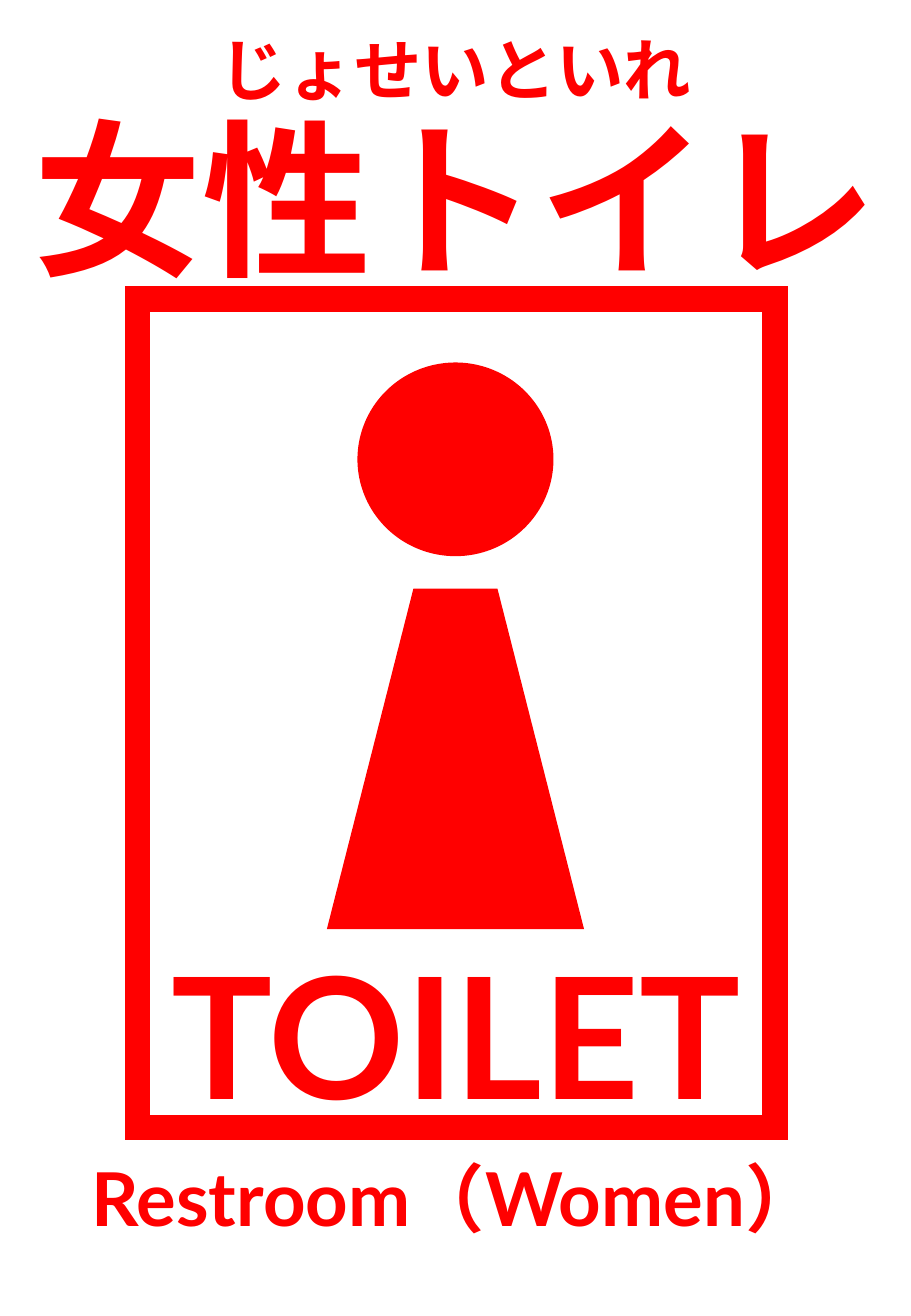
from dataclasses import dataclass
from typing import Optional

from lxml import etree
from pptx import Presentation
from pptx.dml.color import RGBColor
from pptx.enum.shapes import MSO_SHAPE
from pptx.enum.text import MSO_ANCHOR, MSO_AUTO_SIZE, PP_ALIGN
from pptx.oxml.ns import qn
from pptx.slide import Slide
from pptx.util import Inches, Pt

ELLIPSE = MSO_SHAPE.OVAL
RECTANGLE = MSO_SHAPE.RECTANGLE
TRAPEZOID = MSO_SHAPE.TRAPEZOID
CENTER = PP_ALIGN.CENTER
TOP = MSO_ANCHOR.TOP
GROW = MSO_AUTO_SIZE.SHAPE_TO_FIT_TEXT

PAGE_WIDTH, PAGE_HEIGHT = 7.5, 10.83
FRAME_LEFT, FRAME_WIDTH = 1.13, 5.25


@dataclass(frozen=True)
class Theme:
    red: RGBColor = RGBColor(0xFF, 0x00, 0x00)
    latin_font: str = "Lato"
    japanese_font: str = "Noto Sans CJK JP"
    title_size: int = 100
    caption_size: int = 44
    reading_size: int = 40
    thin_line: int = 1
    frame_line: int = 15


THEME = Theme()


@dataclass(frozen=True)
class Figure:
    kind: MSO_SHAPE
    left: float
    top: float
    width: float
    height: float
    line_width: int = THEME.thin_line
    filled: bool = True
    slant: Optional[float] = None


@dataclass(frozen=True)
class Label:
    text: str
    top: float
    height: float
    size: int
    font: str
    left: float = 0
    width: float = PAGE_WIDTH


HEAD = Figure(ELLIPSE, 2.95, 2.99, 1.6, 1.58)
FRAME = Figure(RECTANGLE, FRAME_LEFT, 2.46, FRAME_WIDTH, 6.82,
               line_width=THEME.frame_line, filled=False)
DRESS = Figure(TRAPEZOID, 2.7, 4.85, 2.1, 2.79, slant=0.338)

LABELS = [
    Label("女性トイレ", 0.73, 1.78, THEME.title_size, THEME.japanese_font),
    Label("TOILET", 7.61, 1.78, THEME.title_size, THEME.latin_font,
          FRAME_LEFT, FRAME_WIDTH),
    Label("Restroom（Women）", 9.43, 0.84, THEME.caption_size, THEME.latin_font),
    Label("じょせいといれ", 0.18, 0.77, THEME.reading_size, THEME.japanese_font),
]


def draw_figure(page: Slide, figure: Figure) -> None:
    shape = page.shapes.add_shape(
        figure.kind, Inches(figure.left), Inches(figure.top),
        Inches(figure.width), Inches(figure.height))
    shape.shadow.inherit = False
    if figure.slant is not None:
        shape.adjustments[0] = figure.slant
    if figure.filled:
        shape.fill.solid()
        shape.fill.fore_color.rgb = THEME.red
    else:
        shape.fill.background()
    shape.line.color.rgb = THEME.red
    shape.line.width = Pt(figure.line_width)
    # Square corners
    outline = shape.element.spPr.find(qn("a:ln"))
    etree.SubElement(outline, qn("a:miter"), lim="800000")


def draw_label(page: Slide, label: Label) -> None:
    box = page.shapes.add_textbox(
        Inches(label.left), Inches(label.top),
        Inches(label.width), Inches(label.height))
    frame = box.text_frame
    frame.word_wrap = True
    frame.auto_size = GROW
    frame.vertical_anchor = TOP
    para = frame.paragraphs[0]
    para.alignment = CENTER
    span = para.add_run()
    span.text = label.text
    span.font.name = label.font
    span.font.size = Pt(label.size)
    span.font.bold = True
    span.font.color.rgb = THEME.red
    # Typeface for Japanese characters
    properties = span.font._element
    etree.SubElement(properties, qn("a:ea"), typeface=THEME.japanese_font)


def main() -> None:
    deck = Presentation()
    deck.slide_width = Inches(PAGE_WIDTH)
    deck.slide_height = Inches(PAGE_HEIGHT)
    page = deck.slides.add_slide(deck.slide_layouts[6])

    # Head and sign frame
    draw_figure(page, HEAD)
    draw_figure(page, FRAME)
    # Wording
    for label in LABELS:
        draw_label(page, label)
    # Dress
    draw_figure(page, DRESS)

    deck.save("out.pptx")


if __name__ == "__main__":
    main()
